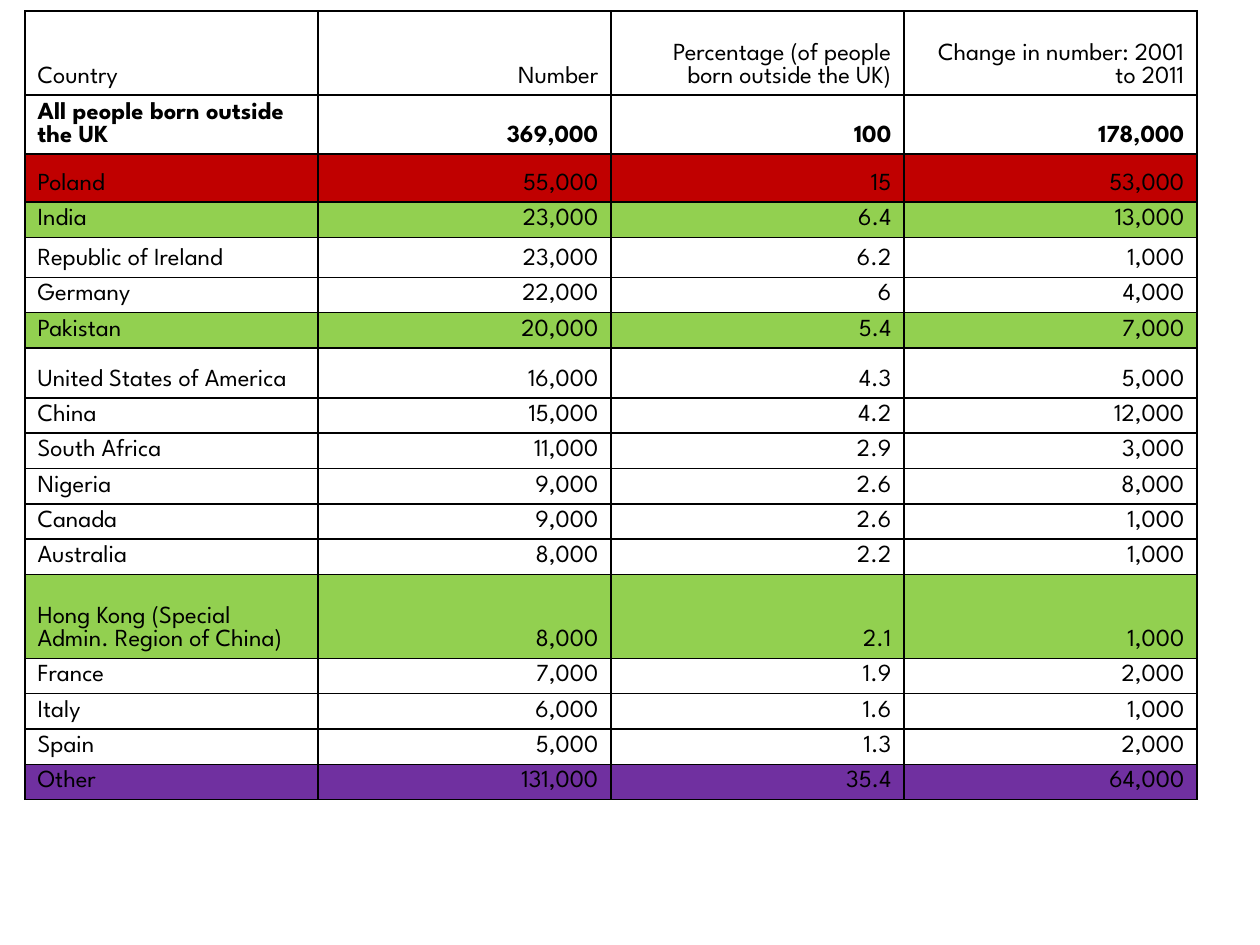
from pptx import Presentation
from pptx import util as u
from pptx.dml.color import RGBColor
from pptx.enum import text
from pptx.oxml import parse_xml
from pptx.oxml.ns import nsdecls

RED, GREEN, PURPLE = "C00000", "92D050", "7030A0"
FONT, INK = "League Spartan", "000000"
LINE = 35  # height of a one-line row

# Country, number, percentage, change, row height, row fill
ROWS = [
    ("Country", "Number", "Percentage (of people born outside the UK)",
     "Change in number: 2001 to 2011", 84, None),
    ("All people born outside the UK", "369,000", "100", "178,000", 59, None),
    ("Poland", "55,000", "15", "53,000", 48, RED),
    ("India", "23,000", "6.4", "13,000", LINE, GREEN),
    ("Republic of Ireland", "23,000", "6.2", "1,000", 40, None),
    ("Germany", "22,000", "6", "4,000", LINE, None),
    ("Pakistan", "20,000", "5.4", "7,000", LINE, GREEN),
    ("United States of America", "16,000", "4.3", "5,000", 50, None),
    ("China", "15,000", "4.2", "12,000", LINE, None),
    ("South Africa", "11,000", "2.9", "3,000", LINE, None),
    ("Nigeria", "9,000", "2.6", "8,000", LINE, None),
    ("Canada", "9,000", "2.6", "1,000", LINE, None),
    ("Australia", "8,000", "2.2", "1,000", LINE, None),
    ("Hong Kong (Special Admin. Region of China)", "8,000", "2.1", "1,000", 84, GREEN),
    ("France", "7,000", "1.9", "2,000", LINE, None),
    ("Italy", "6,000", "1.6", "1,000", LINE, None),
    ("Spain", "5,000", "1.3", "2,000", LINE, None),
    ("Other", "131,000", "35.4", "64,000", LINE, PURPLE),
]
TOTAL = 1  # the row in bold
LEFT, TOP, COL, COLS = 25, 11, 293, 4


def px(n):
    return u.Emu(round(n * 914400 / 126))


def rgb(code):
    return RGBColor.from_string(code)


def edge(cell):
    """Draw a thin line on all four sides; must come before the fill."""
    props = cell._tc.get_or_add_tcPr()
    for side in ("lnL", "lnR", "lnT", "lnB"):
        props.append(parse_xml(
            f'<a:{side} {nsdecls("a")} w="12700"><a:solidFill>'
            f'<a:srgbClr val="{INK}"/></a:solidFill></a:{side}>'))


def write(cell, words, right, bold, fill):
    edge(cell)
    if fill:
        cell.fill.solid()
        cell.fill.fore_color.rgb = rgb(fill)
    else:
        cell.fill.background()
    cell.vertical_anchor = text.MSO_ANCHOR.BOTTOM
    para = cell.text_frame.paragraphs[0]
    para.alignment = text.PP_ALIGN.RIGHT if right else text.PP_ALIGN.LEFT
    run = para.add_run()
    run.text = words
    font = run.font
    font.name, font.size, font.bold = FONT, u.Pt(14), bold
    font.color.rgb = rgb(INK)


def main():
    deck = Presentation()
    deck.slide_width, deck.slide_height = px(1260), px(945)
    slide = deck.slides.add_slide(deck.slide_layouts[6])

    # Table frame
    high = sum(row[-2] for row in ROWS)
    table = slide.shapes.add_table(
        len(ROWS), COLS, px(LEFT), px(TOP), px(COL * COLS), px(high)).table
    table.first_row = table.horz_banding = False
    for col in table.columns:
        col.width = px(COL)

    # Cells
    for r, (*words, tall, fill) in enumerate(ROWS):
        table.rows[r].height = px(tall)
        for c, word in enumerate(words):
            write(table.cell(r, c), word, c > 0, r == TOTAL, fill)

    deck.save("out.pptx")


if __name__ == "__main__":
    main()
